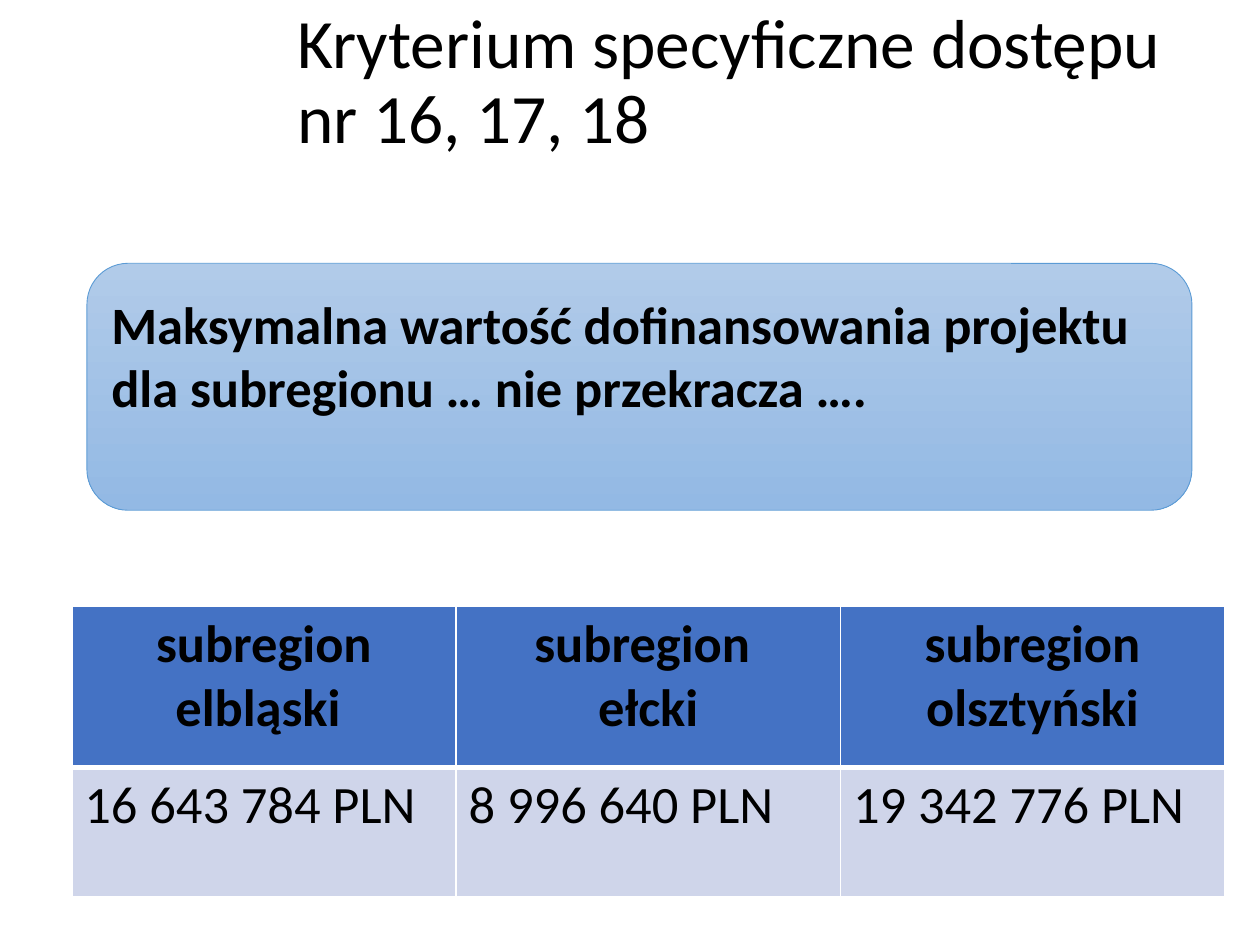
from lxml import etree
from pptx import Presentation
from pptx.dml.color import RGBColor
from pptx.enum.shapes import MSO_SHAPE
from pptx.enum.text import MSO_ANCHOR, MSO_AUTO_SIZE, PP_ALIGN
from pptx.oxml.ns import qn
from pptx.util import Inches, Pt

ROUNDED = MSO_SHAPE.ROUNDED_RECTANGLE
MIDDLE = MSO_ANCHOR.MIDDLE
NO_AUTOFIT = MSO_AUTO_SIZE.NONE
LEFT, CENTER = PP_ALIGN.LEFT, PP_ALIGN.CENTER

FONT = "Calibri"
BLACK, WHITE = "000000", "FFFFFF"
HEADER_FILL, VALUE_FILL = "4472C4", "CFD5EA"
GRADIENT = ("B1CBE9", "93B9E4")
BOX_LINE = "5B9BD5"

SUBREGIONS = [["subregion elbląski "], ["subregion ", "ełcki"], ["subregion olsztyński"]]
VALUES = [["16\u00a0643 784 PLN"], ["8\u00a0996\u00a0640 PLN"], ["19 342 776 PLN"]]


def rgb(color):
    return RGBColor.from_string(color)


def add_run(p, text, size, bold=False):
    r = p.add_run()
    r.text = text
    r.font.name = FONT
    r.font.size = Pt(size)
    r.font.bold = bold
    r.font.color.rgb = rgb(BLACK)


def write_paragraphs(tf, lines, size, bold, align):
    for i, line in enumerate(lines):
        p = tf.paragraphs[0] if i == 0 else tf.add_paragraph()
        p.alignment = align
        add_run(p, line, size, bold)


def set_borders(cell, bottom_width):
    """Draw white cell borders, 1 pt except for the bottom one."""
    tc_pr = cell._tc.get_or_add_tcPr()
    widths = {"a:lnL": 1, "a:lnR": 1, "a:lnT": 1, "a:lnB": bottom_width}
    for i, (tag, width) in enumerate(widths.items()):
        ln = etree.Element(qn(tag), w=str(Pt(width)))
        fill = etree.SubElement(ln, qn("a:solidFill"))
        etree.SubElement(fill, qn("a:srgbClr"), val=WHITE)
        tc_pr.insert(i, ln)


def place_title(slide, x, y, w, h):
    title = slide.shapes.title
    title.left, title.top, title.width, title.height = x, y, w, h
    tf = title.text_frame
    tf.auto_size = NO_AUTOFIT
    tf.vertical_anchor = MIDDLE
    p = tf.paragraphs[0]
    p.alignment = LEFT
    p.line_spacing = 0.9
    add_run(p, "Kryterium specyficzne dostępu ", 39.6)
    p.add_line_break()
    add_run(p, "nr 16, 17, 18", 39.6)


def add_amounts_table(slide, x, y, w, row_heights):
    rows = [(SUBREGIONS, HEADER_FILL, True, CENTER, 3),
            (VALUES, VALUE_FILL, False, LEFT, 1)]
    frame = slide.shapes.add_table(len(rows), len(VALUES), x, y, w, sum(row_heights))
    table = frame.table
    for row, height in zip(table.rows, row_heights):
        row.height = height
    for i, (texts, fill, bold, align, bottom_width) in enumerate(rows):
        for j, lines in enumerate(texts):
            cell = table.cell(i, j)
            cell.fill.solid()
            cell.fill.fore_color.rgb = rgb(fill)
            set_borders(cell, bottom_width)
            write_paragraphs(cell.text_frame, lines, 30, bold, align)


def add_criterion_box(slide, x, y, w, h):
    sp = slide.shapes.add_shape(ROUNDED, x, y, w, h)
    sp.shadow.inherit = False
    sp.fill.gradient()
    sp.fill.gradient_angle = 270
    for stop, color in zip(sp.fill.gradient_stops, GRADIENT):
        stop.color.rgb = rgb(color)
    sp.line.color.rgb = rgb(BOX_LINE)
    sp.line.width = Pt(0.5)
    tf = sp.text_frame
    tf.word_wrap = True
    tf.vertical_anchor = MIDDLE
    tf.margin_bottom = Inches(0.56)
    write_paragraphs(tf, ["Maksymalna wartość dofinansowania projektu",
                          "dla subregionu … nie przekracza …."], 30, True, LEFT)


def main():
    prs = Presentation()
    prs.slide_width, prs.slide_height = Inches(10), Inches(7.5)
    slide = prs.slides.add_slide(prs.slide_layouts[5])
    place_title(slide, Inches(2.26), Inches(0.14), Inches(8.62), Inches(1.05))
    add_amounts_table(slide, Inches(0.57), Inches(4.81), Inches(9.15),
                      [Inches(1.28), Inches(1.03)])
    add_criterion_box(slide, Inches(0.69), Inches(2.09), Inches(8.77), Inches(1.96))
    prs.save("out.pptx")


if __name__ == "__main__":
    main()
